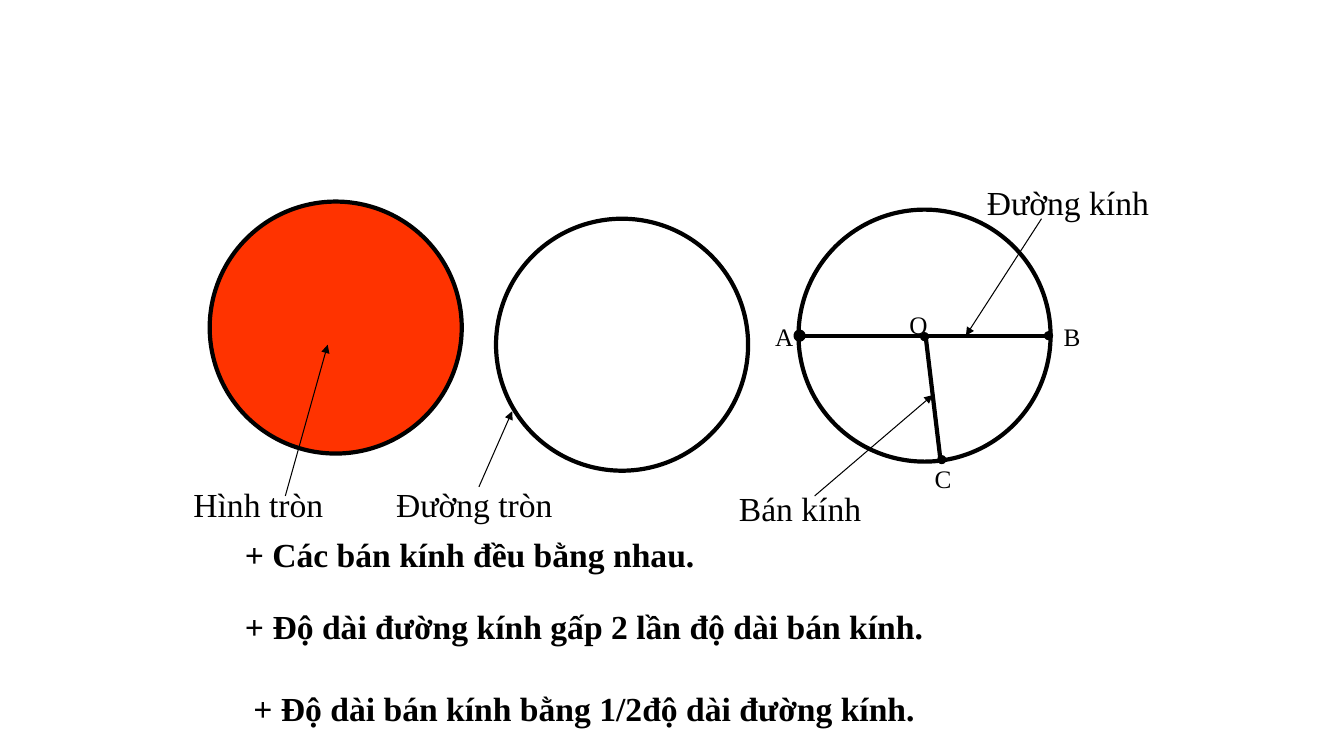
from lxml import etree
from pptx import Presentation
from pptx.dml.color import RGBColor
from pptx.enum.shapes import MSO_CONNECTOR, MSO_SHAPE
from pptx.enum.text import MSO_ANCHOR, MSO_AUTO_SIZE
from pptx.oxml.ns import qn
from pptx.util import Inches, Pt

OVAL = MSO_SHAPE.OVAL
DOT = MSO_SHAPE.FLOWCHART_CONNECTOR
STRAIGHT = MSO_CONNECTOR.STRAIGHT
TOP, MIDDLE = MSO_ANCHOR.TOP, MSO_ANCHOR.MIDDLE
NO_FIT, GROW = MSO_AUTO_SIZE.NONE, MSO_AUTO_SIZE.SHAPE_TO_FIT_TEXT

INK = "000000"
RED = "FF3300"
DIAMETER = 2.5
DOT_SIZE = 0.08


def color(hex_text):
    return RGBColor.from_string(hex_text)


def apply(target, values):
    for name, value in values.items():
        setattr(target, name, value)


class CirclePage:
    """Style and drawing methods for the current slide."""

    font = "Times New Roman"

    def __init__(self, page):
        self.page = page

    def round_shape(self, kind, left, top, size, fill=None, weight=3):
        shape = self.page.shapes.add_shape(
            kind, Inches(left), Inches(top), Inches(size), Inches(size))
        shape.shadow.inherit = False
        if fill:
            shape.fill.solid()
            shape.fill.fore_color.rgb = color(fill)
        else:
            shape.fill.background()
        shape.line.color.rgb = color(INK)
        shape.line.width = Pt(weight)

    def line(self, start, end, weight=3, arrow=False):
        link = self.page.shapes.add_connector(
            STRAIGHT, *(Inches(value) for value in start + end))
        link.line.color.rgb = color(INK)
        link.line.width = Pt(weight)
        properties = link._element.spPr
        if arrow:
            etree.SubElement(properties.find(qn("a:ln")), qn("a:tailEnd"), type="triangle")
        etree.SubElement(properties, qn("a:effectLst"))

    def add_span(self, para, text, size, bold=False):
        span = para.add_run()
        span.text = text
        apply(span.font, {"name": self.font, "size": Pt(size), "bold": bold})
        span.font.color.rgb = color(INK)

    def label(self, text, left, top, width, height=0.5, size=24, bold=False, wrap=False):
        box = self.page.shapes.add_textbox(
            Inches(left), Inches(top), Inches(width), Inches(height))
        apply(box.text_frame, {"word_wrap": wrap, "auto_size": GROW, "vertical_anchor": MIDDLE})
        self.add_span(box.text_frame.paragraphs[0], text, size, bold)

    def statements(self, texts, left, top, width, height, gap):
        body = self.page.placeholders[1]
        apply(body, {"left": Inches(left), "top": Inches(top),
                     "width": Inches(width), "height": Inches(height)})
        frame = body.text_frame
        apply(frame, {"word_wrap": True, "auto_size": NO_FIT, "vertical_anchor": TOP})
        for index, text in enumerate(texts):
            para = frame.add_paragraph() if index else frame.paragraphs[0]
            apply(para, {"space_before": Pt(gap if index else 0), "space_after": Pt(0)})
            settings = para._p.get_or_add_pPr()
            settings.set("marL", "0")
            settings.set("indent", "0")
            etree.SubElement(settings, qn("a:buNone"))
            self.add_span(para, text, 24, bold=True)


def main():
    deck = Presentation()
    deck.slide_width, deck.slide_height = Inches(13.33), Inches(7.5)
    page = deck.slides.add_slide(deck.slide_layouts[1])
    title = page.shapes.title._element
    title.getparent().remove(title)
    drawing = CirclePage(page)

    # Three circles
    for left, top, fill in ((2.08, 2, RED), (4.92, 2.17, None), (7.92, 2.08, None)):
        drawing.round_shape(OVAL, left, top, DIAMETER, fill)

    # Diameter AB, radius OC and their points
    drawing.line((7.9, 3.33), (10.4, 3.33))
    drawing.line((9.18, 3.33), (9.33, 4.58))
    for left, top, weight in ((9.13, 3.3, 0.75), (10.36, 3.29, 0.75),
                              (7.89, 3.29, 3), (9.3, 4.52, 0.75)):
        drawing.round_shape(DOT, left, top, DOT_SIZE, INK, weight)
    for letter, left, top in (("O", 8.92, 3.02), ("A", 7.59, 3.14),
                              ("B", 10.45, 3.14), ("C", 9.17, 4.55)):
        drawing.label(letter, left, top, 0.38, 0.4, size=18)

    # Names with arrows to the parts they describe
    for name, left, top, width, start, end in (
            ("Hình tròn", 1.82, 4.75, 1.5, (2.83, 4.92), (3.25, 3.42)),
            ("Đường tròn", 3.83, 4.75, 1.77, (4.75, 4.83), (5.08, 4.08)),
            ("Đường kính", 9.69, 1.75, 1.83, (10.33, 2.17), (9.58, 3.33)),
            ("Bán kính", 7.23, 4.79, 1.51, (8.08, 4.92), (9.25, 3.92))):
        drawing.line(start, end, weight=0.75, arrow=True)
        drawing.label(name, left, top, width)

    # Conclusions
    drawing.label("+ Các bán kính đều bằng nhau.", 2.33, 5.25, 5, bold=True, wrap=True)
    drawing.statements(("+ Độ dài đường kính gấp 2 lần độ dài bán kính.",
                        " + Độ dài bán kính bằng 1/2độ dài đường kính."),
                       2.33, 5.96, 7.25, 1.5, gap=29.5)

    deck.save("out.pptx")


if __name__ == "__main__":
    main()
